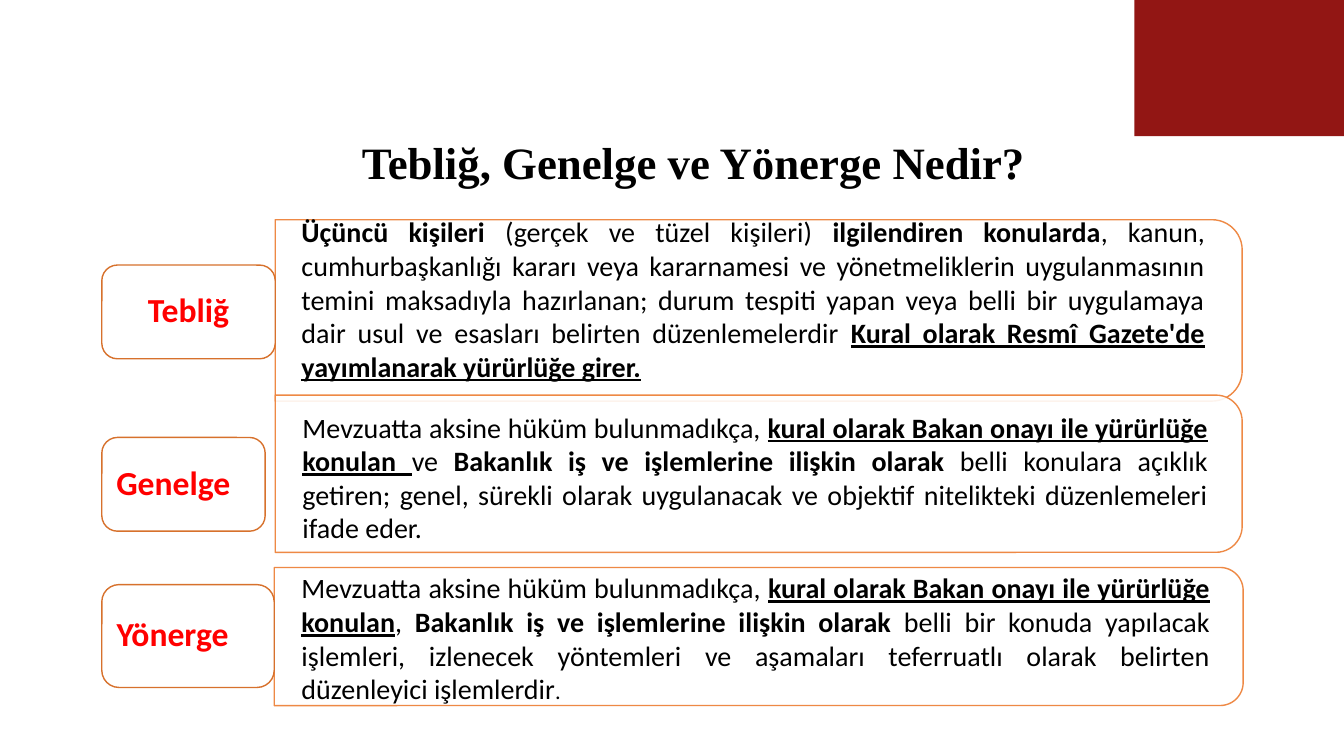
"""Builds a slide that defines three kinds of Turkish administrative regulation."""
from lxml import etree
from pptx import Presentation
from pptx.dml.color import RGBColor
from pptx.enum.shapes import MSO_SHAPE
from pptx.enum.text import MSO_ANCHOR, PP_ALIGN
from pptx.oxml.ns import qn
from pptx.util import Inches, Pt

RECTANGLE = MSO_SHAPE.RECTANGLE
ROUNDED = MSO_SHAPE.ROUNDED_RECTANGLE
TWO_ROUNDED = MSO_SHAPE.ROUND_2_SAME_RECTANGLE
CENTER, JUSTIFY = PP_ALIGN.CENTER, PP_ALIGN.JUSTIFY
MIDDLE = MSO_ANCHOR.MIDDLE

PLAIN = {}
BOLD = {"bold": True}
KEY = {"bold": True, "underline": True}
SMALL = {"size": 16}

TITLE = "Tebliğ, Genelge ve Yönerge Nedir?"
ROWS = [
    {
        "label": "Tebliğ", "label_align": CENTER, "label_at": (1.01, 2.63, 1.72, 0.93),
        "panel_at": (2.73, 2.18, 9.59, 1.8), "text_at": (2.72, 2.09, 9.5, 1.75),
        "spans": [
            ("Üçüncü kişileri ", BOLD),
            ("(gerçek ve tüzel kişileri) ", PLAIN),
            ("ilgilendiren konularda", BOLD),
            (", kanun, cumhurbaşkanlığı kararı veya kararnamesi ve yönetmeliklerin "
             "uygulanmasının temini maksadıyla hazırlanan; durum tespiti yapan veya belli "
             "bir uygulamaya dair usul ve esasları belirten düzenlemelerdir ", PLAIN),
            ("Kural olarak Resmî Gazete'de yayımlanarak yürürlüğe girer.", KEY),
        ],
    },
    {
        "label": "Genelge", "label_align": JUSTIFY, "label_at": (1.01, 4.34, 1.62, 0.93),
        "panel_at": (2.73, 3.92, 9.59, 1.56), "text_at": (2.73, 4.03, 9.52, 1.41),
        "spans": [
            ("Mevzuatta aksine hüküm bulunmadıkça, ", PLAIN),
            ("kural olarak Bakan onayı ile yürürlüğe konulan ", KEY),
            ("ve ", PLAIN),
            ("Bakanlık iş ve işlemlerine ilişkin olarak", BOLD),
            (" belli konulara açıklık getiren; genel, sürekli olarak uygulanacak ve objektif "
             "nitelikteki düzenlemeleri ifade eder.", PLAIN),
        ],
    },
    {
        "label": "Yönerge", "label_align": JUSTIFY, "label_at": (1.01, 5.8, 1.71, 1.02),
        "panel_at": (2.72, 5.63, 9.61, 1.37), "text_at": (2.72, 5.63, 9.55, 1.4),
        "spans": [
            ("Mevzuatta aksine hüküm bulunmadıkça, ", PLAIN),
            ("kural olarak Bakan onayı ile yürürlüğe konulan", KEY),
            (", ", PLAIN),
            ("Bakanlık iş ve işlemlerine ilişkin olarak ", BOLD),
            ("belli bir konuda yapılacak işlemleri, izlenecek yöntemleri ve aşamaları "
             "teferruatlı olarak belirten düzenleyici işlemlerdir", PLAIN),
            (".", SMALL),
        ],
    },
]


def color(value):
    return RGBColor.from_string(value)


def set_opacity(fill_parent, percent):
    for solid in fill_parent.iter(qn("a:solidFill")):
        alpha = etree.SubElement(solid[0], qn("a:alpha"))
        alpha.set("val", str(percent * 1000))


def add_block(page, kind, at, fill, line=None):
    block = page.shapes.add_shape(kind, *map(Inches, at))
    block.shadow.inherit = False
    block.fill.solid()
    block.fill.fore_color.rgb = color(fill)
    if line:
        block.line.color.rgb = color(line)
        block.line.width = Pt(1)
    else:
        block.line.fill.background()
    return block


def add_panel(page, at):
    left, top, width, height = at
    shift = (width - height) / 2
    frame = (left + shift, top - shift, height, width)
    panel = add_block(page, TWO_ROUNDED, frame, "FFFFFF", "ED7D31")
    panel.rotation = 90
    set_opacity(panel._element.spPr, 90)


def write(box, spans, align=CENTER, font="Calibri", size=20, ink="000000",
          side=0.1, spacing=1.0):
    frame = box.text_frame
    frame.word_wrap = True
    frame.vertical_anchor = MIDDLE
    frame.margin_left = frame.margin_right = Inches(side)
    frame.margin_top = frame.margin_bottom = 0
    para = frame.paragraphs[0]
    para.alignment = align
    para.line_spacing = spacing
    for text, style in spans:
        span = para.add_run()
        span.text = text
        span.font.name = font
        span.font.size = Pt(style.get("size", size))
        span.font.bold = style.get("bold", False)
        span.font.underline = style.get("underline", False)
        span.font.color.rgb = color(ink)


def main():
    deck = Presentation()
    deck.slide_width, deck.slide_height = Inches(13.33), Inches(7.5)
    page = deck.slides.add_slide(deck.slide_layouts[6])

    for row in ROWS:
        add_panel(page, row["panel_at"])
        box = page.shapes.add_textbox(*map(Inches, row["text_at"]))
        write(box, row["spans"], align=JUSTIFY, side=0.27)
        label = add_block(page, ROUNDED, row["label_at"], "FFFFFF", "D7712C")
        write(label, [(row["label"], BOLD)], align=row["label_align"], size=24,
              ink="FF0000", side=0.1, spacing=0.9)

    title = page.shapes.add_textbox(*map(Inches, (1.13, 1.2, 11.5, 0.88)))
    write(title, [(TITLE, BOLD)], font="Times New Roman", size=32, spacing=0.9)
    add_block(page, RECTANGLE, (11.25, -0.01, 2.09, 1.36), "921614")
    deck.save("out.pptx")


if __name__ == "__main__":
    main()
